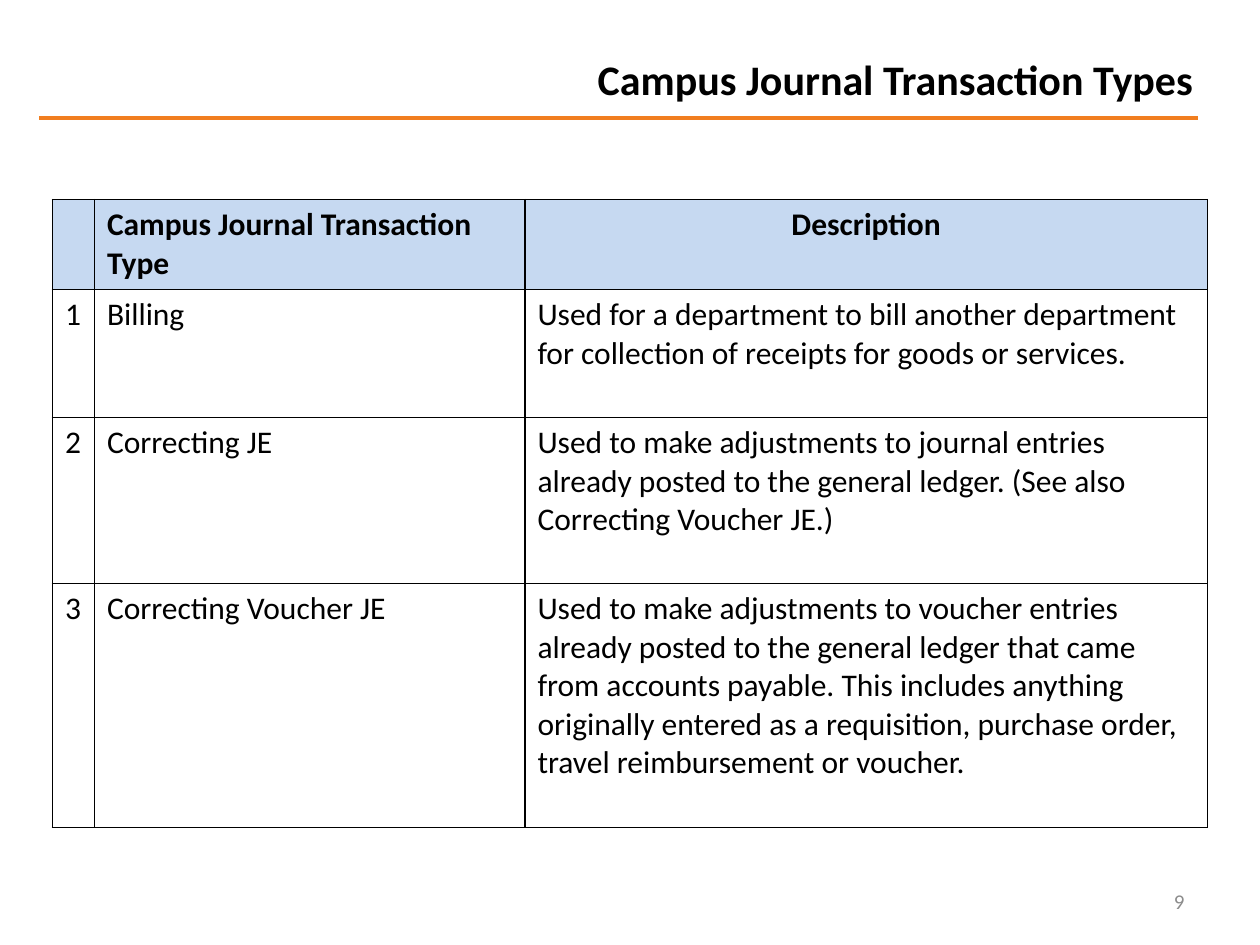
import pptx
import pptx.dml.color
import pptx.enum.shapes
import pptx.enum.text
import pptx.oxml
import pptx.oxml.ns
import pptx.util
from lxml import etree

Pt = pptx.util.Pt
ALIGN = pptx.enum.text.PP_ALIGN
ANCHOR = pptx.enum.text.MSO_ANCHOR

FONT = "Calibri"
BLACK = "000000"
COLUMN_WIDTHS = [24, 246, 390]
ROW_HEIGHTS = [51.4, 73.1, 95, 139.5]
ROWS = [
    ("", "Campus Journal Transaction Type", "Description"),
    ("1", "Billing",
     "Used for a department to bill another department for collection of "
     "receipts for goods or services."),
    ("2", "Correcting JE",
     "Used to make adjustments to journal entries already posted to the "
     "general ledger. (See also Correcting Voucher JE.)"),
    ("3", "Correcting Voucher JE",
     "Used to make adjustments to voucher entries already posted to the "
     "general ledger that came from accounts payable. This includes anything "
     "originally entered as a requisition, purchase order, travel "
     "reimbursement or voucher."),
]


def color(value):
    return pptx.dml.color.RGBColor.from_string(value)


def write(frame, text, size, ink=BLACK, bold=False, align=ALIGN.LEFT):
    paragraph = frame.paragraphs[0]
    paragraph.text = text
    paragraph.alignment = align
    paragraph.font.name = FONT
    paragraph.font.size = Pt(size)
    paragraph.font.bold = bold
    paragraph.font.color.rgb = color(ink)


def add_title(slide):
    title = slide.shapes.title
    title.left, title.top = Pt(150), Pt(24)
    title.width, title.height = Pt(539), Pt(42)
    frame = title.text_frame
    frame.word_wrap = True
    frame.auto_size = pptx.enum.text.MSO_AUTO_SIZE.NONE
    frame.vertical_anchor = ANCHOR.MIDDLE
    write(frame, "Campus Journal Transaction Types", 24, bold=True,
          align=ALIGN.RIGHT)


def add_title_rule(slide):
    rule = slide.shapes.add_connector(
        pptx.enum.shapes.MSO_CONNECTOR.STRAIGHT,
        Pt(22.5), Pt(67.5), Pt(684.5), Pt(67.5))
    rule.line.color.rgb = color("F17E1F")
    rule.line.width = Pt(2)
    etree.SubElement(rule.element.spPr, pptx.oxml.ns.qn("a:effectLst"))


def add_borders(cell):
    properties = cell._tc.get_or_add_tcPr()
    for side in "LRTB":
        properties.append(pptx.oxml.parse_xml(
            f'<a:ln{side} {pptx.oxml.ns.nsdecls("a")} w="{Pt(1)}">'
            f'<a:solidFill><a:srgbClr val="{BLACK}"/></a:solidFill>'
            f'</a:ln{side}>'))


def fill_cell(cell, text, is_header, align):
    add_borders(cell)
    if is_header:
        cell.fill.solid()
        cell.fill.fore_color.rgb = color("C6D9F1")
    else:
        cell.fill.background()
    write(cell.text_frame, text, 18, bold=is_header, align=align)


def add_transaction_table(slide):
    table = slide.shapes.add_table(
        len(ROWS), len(COLUMN_WIDTHS), Pt(30), Pt(114),
        Pt(sum(COLUMN_WIDTHS)), Pt(sum(ROW_HEIGHTS))).table
    table.horz_banding = False
    for column, width in zip(table.columns, COLUMN_WIDTHS):
        column.width = Pt(width)
    for row, height in zip(table.rows, ROW_HEIGHTS):
        row.height = Pt(height)
    for row_index, texts in enumerate(ROWS):
        for column_index, text in enumerate(texts):
            is_header = row_index == 0
            centred = is_header and text == "Description"
            fill_cell(table.cell(row_index, column_index), text, is_header,
                      ALIGN.CENTER if centred else ALIGN.LEFT)


def add_page_number(slide):
    page_number = slide.shapes.add_textbox(
        Pt(516), Pt(500.5), Pt(168), Pt(28.75))
    frame = page_number.text_frame
    frame.word_wrap = True
    frame.vertical_anchor = ANCHOR.MIDDLE
    write(frame, "9", 12, ink="8C8C8C", align=ALIGN.RIGHT)


def main():
    presentation = pptx.Presentation()
    presentation.slide_width = Pt(720)
    presentation.slide_height = Pt(540)
    slide = presentation.slides.add_slide(presentation.slide_layouts[5])
    add_title_rule(slide)
    add_page_number(slide)
    add_transaction_table(slide)
    add_title(slide)
    presentation.save("out.pptx")


if __name__ == "__main__":
    main()
